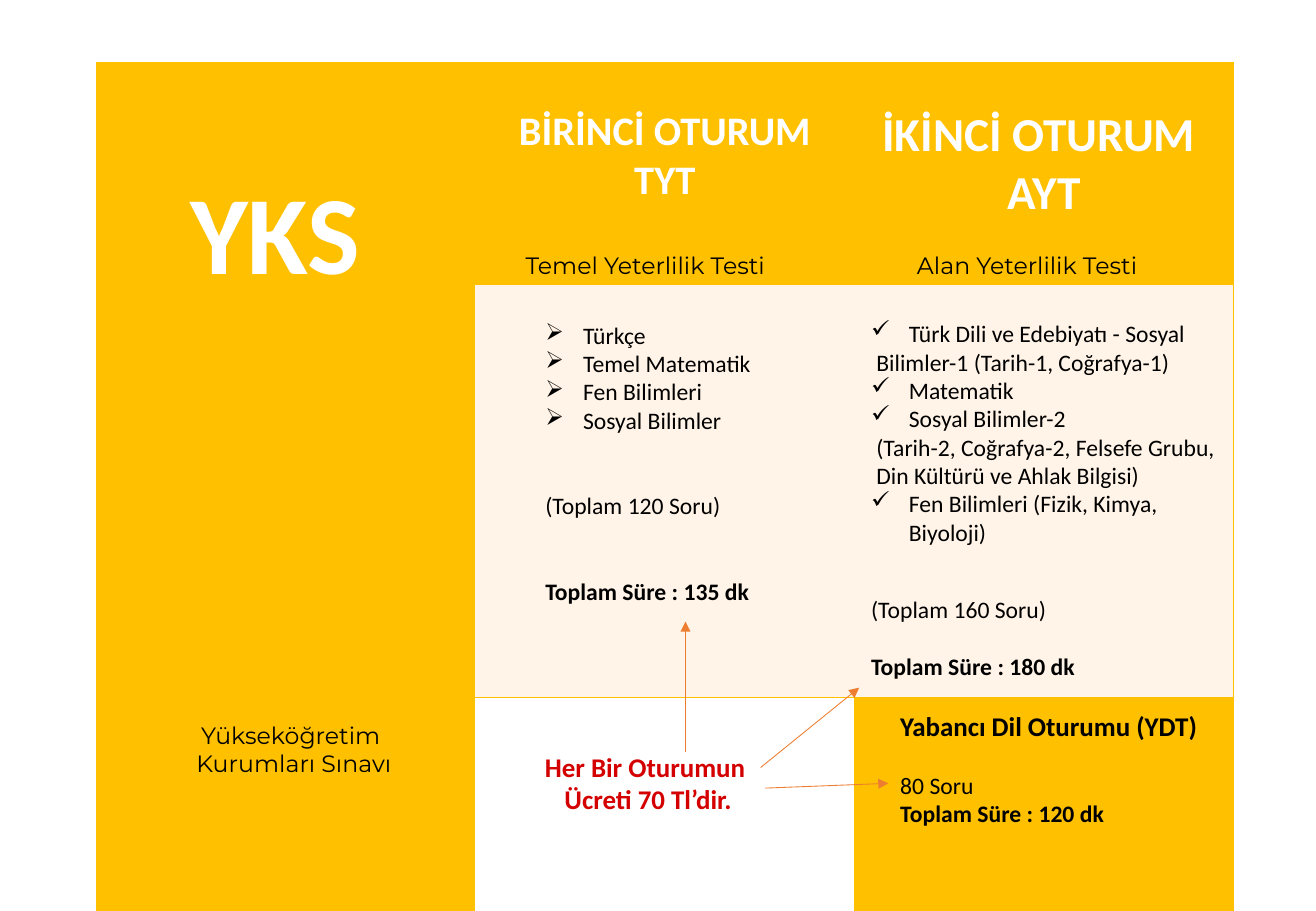
from lxml.etree import SubElement as Sub
from pptx import Presentation
from pptx.dml.color import RGBColor as RGB
from pptx.enum.shapes import MSO_CONNECTOR as Conn
from pptx.enum.text import PP_ALIGN as Align
from pptx.oxml import parse_xml
from pptx.oxml.ns import nsdecls, qn
from pptx.util import Cm, Pt

GOLD, CREAM, WHITE = "FFC000", "FFF4E7", "FFFFFF"
BLACK, RED, ORANGE = "000000", "D40000", "ED7D31"
PLAIN = "{2D5ABB26-0587-4C30-8999-92F81FD0307C}"


def tint(fmt, color):
    fmt.solid()
    fmt.fore_color.rgb = RGB.from_string(color)


def put(para, text, size=14, color=BLACK, bold=False, face="Calibri",
        align=Align.LEFT, before=0, bullet=None, indent=0):
    para.text = text
    para.alignment = align
    if before:
        para.space_before = Pt(before)
    props = para._p.get_or_add_pPr()
    if bullet:
        props.set("marL", str(Cm(0.79)))
        props.set("indent", str(-Cm(0.79)))
        Sub(props, qn("a:buChar"), char=bullet)
    elif indent:
        props.set("marL", str(Cm(indent)))
    font = para.runs[0].font
    font.name, font.size, font.bold = face, Pt(size), bold
    tint(font.fill, color)


class Board:
    """Draws tables, text and arrows in one style on the current slide."""

    def __init__(self, width, height):
        self.deck = Presentation()
        self.deck.slide_width, self.deck.slide_height = Cm(width), Cm(height)
        self.slide = self.deck.slides.add_slide(self.deck.slide_layouts[6])

    def fill(self, frame, lines, **style):
        for i, (text, extra) in enumerate(lines):
            para = frame.add_paragraph() if i else frame.paragraphs[0]
            put(para, text, **{**style, **extra})

    def text(self, box, lines, **style):
        frame = self.slide.shapes.add_textbox(*map(Cm, box)).text_frame
        frame.word_wrap = True
        self.fill(frame, lines, **style)

    def edge(self, cell, side):
        line = (f'<a:{side} {nsdecls("a")} w="12700"><a:solidFill>'
                f'<a:srgbClr val="{GOLD}"/></a:solidFill></a:{side}>')
        cell._tc.get_or_add_tcPr().insert(0, parse_xml(line))

    def table(self, left, top, cols, rows, fills):
        box = map(Cm, (left, top, sum(cols), sum(rows)))
        grid = self.slide.shapes.add_table(len(rows), len(cols), *box).table
        grid.first_row = grid.horz_banding = False
        grid._tbl.tblPr[0].text = PLAIN
        for col, width in zip(grid.columns, cols):
            col.width = Cm(width)
        for r, row in enumerate(grid.rows):
            row.height = Cm(rows[r])
            for c, cell in enumerate(row.cells):
                tint(cell.fill, fills[r][c])
                self.edge(cell, "lnT")
                if c == len(cols) - 1:
                    self.edge(cell, "lnR")
        return grid

    def head(self, cell, lines, top, right=0.25, **style):
        cell.margin_top, cell.margin_right = Cm(top), Cm(right)
        self.fill(cell.text_frame, lines, color=WHITE, bold=True,
                  align=Align.CENTER, **style)

    def arrow(self, *ends):
        link = self.slide.shapes.add_connector(Conn.STRAIGHT, *map(Cm, ends))
        tint(link.line.fill, ORANGE)
        link.line.width = Pt(0.5)
        Sub(link.line._get_or_add_ln(), qn("a:tailEnd"), type="triangle")
        Sub(link._element.spPr, qn("a:effectLst"))


def main():
    board = Board(27.51, 19.05)
    grid = board.table(2, 1.32, [7.93] * 3, [4.62, 8.64, 4.47],
                       [[GOLD] * 3, [GOLD, CREAM, CREAM], [GOLD, WHITE, GOLD]])
    grid.cell(0, 0).merge(grid.cell(2, 0))
    board.head(grid.cell(0, 0), [("YKS", {})], 2.21, 0.67, size=66)
    board.head(grid.cell(0, 1), [("BİRİNCİ OTURUM", {}), ("TYT", {})],
               0.91, size=24)
    board.head(grid.cell(0, 2), [("İKİNCİ OTURUM ", {}), ("AYT", {})],
               0.91, size=28)

    label = {"face": "Montserrat"}
    board.text((3.63, 14.94, 5.03, 1.44),
               [("Yükseköğretim ", {}), ("Kurumları Sınavı", {})],
               align=Align.CENTER, **label)
    board.text((10.74, 5.13, 6.3, 0.87), [("Temel Yeterlilik Testi", {})], **label)
    board.text((18.92, 5.13, 5.9, 0.87), [("Alan Yeterlilik Testi", {})], **label)

    point, tick, inset = {"bullet": "➢"}, {"bullet": "✓"}, {"indent": 0.11}
    bold = {"bold": True}
    board.text((11.15, 6.58, 5.2, 6.25), [
        ("Türkçe", point),
        ("Temel Matematik", point),
        ("Fen Bilimleri", point),
        ("Sosyal Bilimler", point),
        ("(Toplam 120 Soru)", {"before": 34}),
        ("Toplam Süre : 135 dk", {"before": 34, **bold})])
    board.text((17.96, 6.55, 7.8, 5.05), [
        ("Türk Dili ve Edebiyatı - Sosyal", tick),
        ("Bilimler-1 (Tarih-1, Coğrafya-1)", inset),
        ("Matematik", tick),
        ("Sosyal Bilimler-2", tick),
        ("(Tarih-2, Coğrafya-2, Felsefe Grubu,", inset),
        ("Din Kültürü ve Ahlak Bilgisi)", inset),
        ("Fen Bilimleri (Fizik, Kimya, Biyoloji)", tick)])
    board.text((17.96, 12.32, 5.2, 2.06), [
        ("(Toplam 160 Soru)", {}),
        ("Toplam Süre : 180 dk", {"before": 17, **bold})])
    board.text((18.57, 14.71, 7, 2.74), [
        ("Yabancı Dil Oturumu (YDT)", {"size": 16, **bold}),
        ("80 Soru", {"before": 17}),
        ("Toplam Süre : 120 dk", bold)])
    board.text((11.1, 15.57, 4.9, 1.63),
               [("Her Bir Oturumun ", {}), ("Ücreti 70 Tl’dir.", {})],
               size=16, color=RED, bold=True, align=Align.CENTER)

    board.arrow(14.33, 15.72, 14.33, 13)
    board.arrow(15.9, 16.05, 17.96, 14.38)
    board.arrow(16, 16.48, 18.57, 16.38)
    board.deck.save("out.pptx")


if __name__ == "__main__":
    main()
